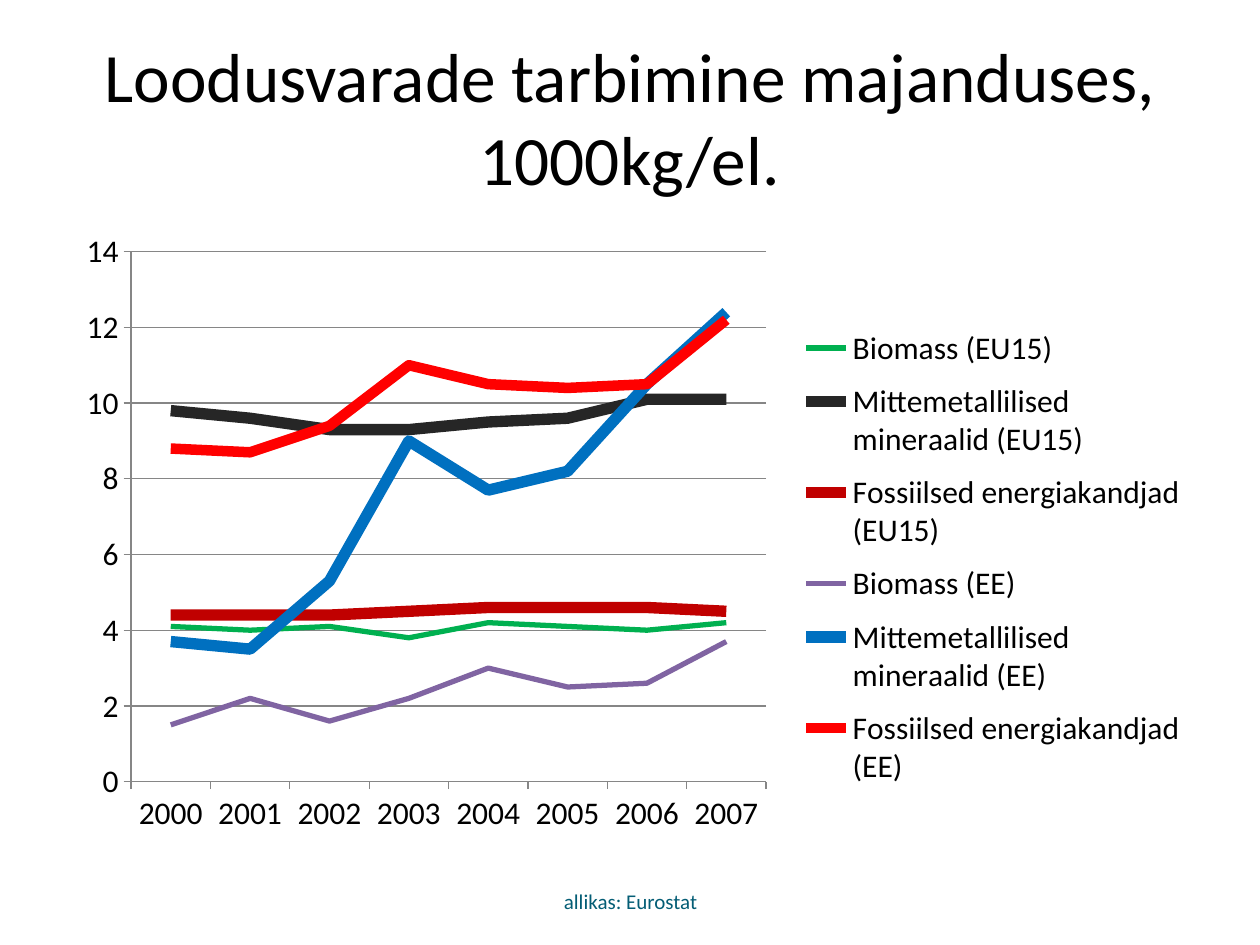
"""Build a slide with a line chart of natural resource use in the economy."""
from lxml.etree import SubElement
from pptx import Presentation
from pptx.chart.data import CategoryChartData
from pptx.dml.color import RGBColor
from pptx.enum.chart import XL_CHART_TYPE, XL_LEGEND_POSITION, XL_MARKER_STYLE, XL_TICK_MARK
from pptx.enum.text import MSO_ANCHOR, PP_ALIGN
from pptx.oxml.ns import qn
from pptx.util import Inches, Pt

FONT = "Calibri"
YEARS = [str(year) for year in range(2000, 2008)]
RESOURCES = [
    ("Biomass (EU15)", "00B050", 3, [4.1, 4, 4.1, 3.8, 4.2, 4.1, 4, 4.2]),
    ("Mittemetallilised mineraalid (EU15)", "262626", 6.5, [9.8, 9.6, 9.3, 9.3, 9.5, 9.6, 10.1, 10.1]),
    ("Fossiilsed energiakandjad (EU15)", "C00000", 6.5, [4.4, 4.4, 4.4, 4.5, 4.6, 4.6, 4.6, 4.5]),
    ("Biomass (EE)", "8064A2", 3, [1.5, 2.2, 1.6, 2.2, 3, 2.5, 2.6, 3.7]),
    ("Mittemetallilised mineraalid (EE)", "0070C0", 6.5, [3.7, 3.5, 5.3, 9, 7.7, 8.2, 10.5, 12.4]),
    ("Fossiilsed energiakandjad (EE)", "FF0000", 6, [8.8, 8.7, 9.4, 11, 10.5, 10.4, 10.5, 12.2]),
]


def color(hex_code):
    return RGBColor.from_string(hex_code)


def add_text(text, *, left, top, width, height, size, ink):
    frame = slide.shapes.add_textbox(Inches(left), Inches(top), Inches(width), Inches(height)).text_frame
    frame.word_wrap = True
    frame.vertical_anchor = MSO_ANCHOR.MIDDLE
    paragraph = frame.paragraphs[0]
    paragraph.alignment = PP_ALIGN.CENTER
    run = paragraph.add_run()
    run.text = text
    run.font.name = FONT
    run.font.size = Pt(size)
    run.font.color.rgb = color(ink)


presentation = Presentation()
presentation.slide_width = Inches(10)
presentation.slide_height = Inches(7.5)
slide = presentation.slides.add_slide(presentation.slide_layouts[6])

add_text("Loodusvarade tarbimine majanduses, 1000kg/el.",
         left=0.5, top=0.3, width=9, height=1.25, size=39.6, ink="000000")

consumption = CategoryChartData()
consumption.categories = YEARS
for name, ink, weight, values in RESOURCES:
    consumption.add_series(name, values)
chart = slide.shapes.add_chart(XL_CHART_TYPE.LINE, Inches(0.5), Inches(1.75),
                               Inches(9), Inches(4.95), consumption).chart
chart.has_title = False
chart.font.name = FONT
chart.font.size = Pt(18)
chart.font.color.rgb = color("000000")
chart.plots[0].vary_by_categories = False

for series, (name, ink, weight, values) in zip(chart.plots[0].series, RESOURCES):
    series.smooth = False
    series.marker.style = XL_MARKER_STYLE.NONE
    series.format.line.color.rgb = color(ink)
    series.format.line.width = Pt(weight)

years_axis, amount_axis = chart.category_axis, chart.value_axis
amount_axis.minimum_scale = 0
amount_axis.maximum_scale = 14
amount_axis.major_unit = 2
amount_axis.has_major_gridlines = True
years_axis.has_major_gridlines = False
for axis in (years_axis, amount_axis):
    axis.major_tick_mark = XL_TICK_MARK.OUTSIDE
    axis.minor_tick_mark = XL_TICK_MARK.NONE
for ruled in (years_axis, amount_axis, amount_axis.major_gridlines):
    ruled.format.line.color.rgb = color("868686")
    ruled.format.line.width = Pt(0.75)

chart.has_legend = True
chart.legend.position = XL_LEGEND_POSITION.RIGHT
chart.legend.include_in_layout = False

plot_area = chart.plots[0]._element.getparent()
legend = chart.legend._element
for part, index, target, box in (
    (plot_area, 0, "inner", (0.06, 0.05, 0.56, 0.85)),
    (legend, 1, None, (0.65, 0.15, 0.34, 0.78)),
):
    for old_layout in part.findall(qn("c:layout")):
        part.remove(old_layout)
    layout = SubElement(part, qn("c:layout"))
    part.insert(index, layout)
    manual = SubElement(layout, qn("c:manualLayout"))
    if target:
        SubElement(manual, qn("c:layoutTarget")).set("val", target)
    for tag in ("c:xMode", "c:yMode"):
        SubElement(manual, qn(tag)).set("val", "edge")
    for tag, share in zip(("c:x", "c:y", "c:w", "c:h"), box):
        SubElement(manual, qn(tag)).set("val", str(share))

add_text("allikas: Eurostat", left=3.42, top=6.95, width=3.17, height=0.4, size=12, ink="045D75")

presentation.save("out.pptx")
